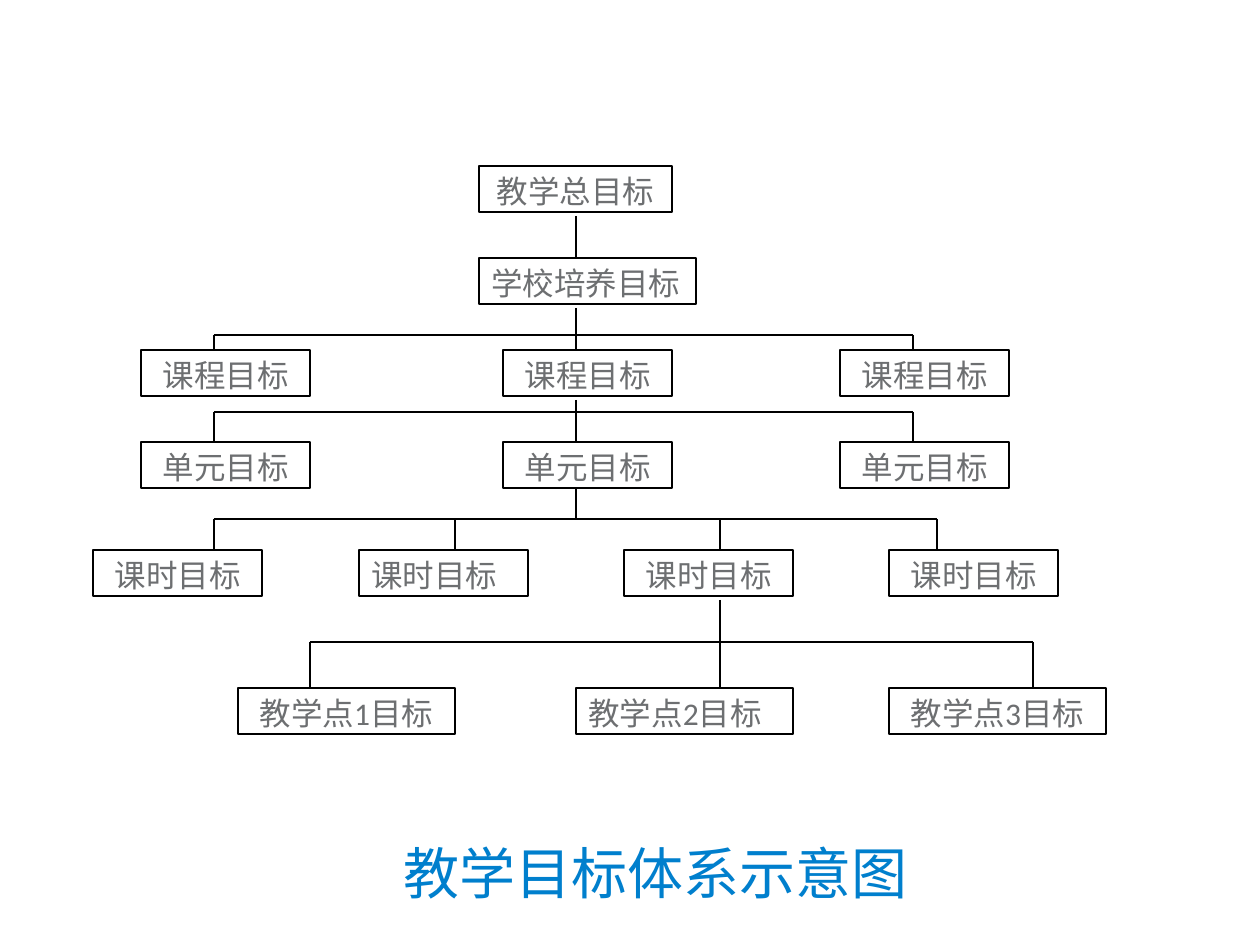
import dataclasses

import pptx
import pptx.dml.color
import pptx.enum.shapes
import pptx.enum.text
import pptx.oxml.ns
import pptx.util
from lxml import etree

EMU_PER_PX = 914400 / 126
ALIGN = pptx.enum.text.PP_ALIGN


@dataclasses.dataclass(frozen=True)
class Theme:
    title_color: str = "007FCD"
    text_color: str = "6D6F71"
    line_color: str = "000000"
    box_fill: str = "FFFFFF"
    title_font: str = "Arial"
    box_font: str = "Calibri"
    title_size: int = 32
    box_size: int = 18
    line_width: float = 0.75


def px(length):
    return pptx.util.Emu(round(length * EMU_PER_PX))


def rgb(color):
    return pptx.dml.color.RGBColor.from_string(color)


class GoalTree:
    def __init__(self, page, theme):
        self.page = page
        self.theme = theme

    def add_span(self, para, text, font, size, color):
        span = para.add_run()
        span.text = text
        span.font.name = font
        span.font.size = pptx.util.Pt(size)
        span.font.color.rgb = rgb(color)

    def outline(self, line):
        line.color.rgb = rgb(self.theme.line_color)
        line.width = pptx.util.Pt(self.theme.line_width)

    def title(self, text, left, top, width, height):
        box = self.page.shapes.title
        box.left, box.top, box.width, box.height = map(px, (left, top, width, height))
        box.text_frame.vertical_anchor = pptx.enum.text.MSO_ANCHOR.BOTTOM
        para = box.text_frame.paragraphs[0]
        para.alignment = ALIGN.CENTER
        para.line_spacing = 0.9
        self.add_span(para, text, self.theme.title_font, self.theme.title_size,
                      self.theme.title_color)

    def goal(self, text, left, top, width, align=ALIGN.CENTER):
        box = self.page.shapes.add_shape(
            pptx.enum.shapes.MSO_SHAPE.RECTANGLE,
            px(left), px(top), px(width), px(46))
        box.shadow.inherit = False
        box.fill.solid()
        box.fill.fore_color.rgb = rgb(self.theme.box_fill)
        self.outline(box.line)
        box.text_frame.word_wrap = True
        box.text_frame.vertical_anchor = pptx.enum.text.MSO_ANCHOR.TOP
        para = box.text_frame.paragraphs[0]
        para.alignment = align
        self.add_span(para, text, self.theme.box_font, self.theme.box_size,
                      self.theme.text_color)

    def line(self, x1, y1, x2, y2):
        connector = self.page.shapes.add_connector(
            pptx.enum.shapes.MSO_CONNECTOR.STRAIGHT, px(x1), px(y1), px(x2), px(y2))
        self.outline(connector.line)
        properties = connector._element.spPr
        etree.SubElement(properties, pptx.oxml.ns.qn("a:effectLst"))

    def branch(self, trunk, drops, bar, bottom):
        """Draw a trunk (x, top, bottom), a bar, and drops from the bar to a row."""
        x, top, end = trunk
        self.line(x, top, x, end)
        self.line(drops[0], bar, drops[-1], bar)
        for drop in drops:
            self.line(drop, bar, drop, bottom)


def main():
    deck = pptx.Presentation()
    deck.slide_width, deck.slide_height = px(1260), px(945)
    page = deck.slides.add_slide(deck.slide_layouts[5])
    tree = GoalTree(page, Theme())
    tree.title("教学目标体系示意图", 84, 816, 1143, 97)

    narrow, wide = 169, 217
    thirds = (141, 503, 840)
    quarters = (93, 359, 624, 889)
    total, school, course, unit, lesson, point = 166, 258, 350, 442, 550, 688

    tree.goal("教学总目标", 479, total, 193)
    tree.goal("学校培养目标", 479, school, wide, ALIGN.LEFT)
    for text, top in (("课程目标", course), ("单元目标", unit)):
        for left in thirds:
            tree.goal(text, left, top, narrow)
    for left in quarters:
        align = ALIGN.LEFT if left == quarters[1] else ALIGN.CENTER
        tree.goal("课时目标", left, lesson, narrow, align)
    for number, left in enumerate((238, 576, 889), start=1):
        align = ALIGN.LEFT if number == 2 else ALIGN.CENTER
        tree.goal(f"教学点{number}目标", left, point, wide, align)

    center, right_center = 576, 720
    tree.line(center, 216, center, school)
    tree.branch((center, 308, course), (214, 913), 335, course)
    tree.branch((center, 400, unit), (214, 913), 412, unit)
    tree.branch((center, 489, 519), (214, 455, right_center, 937), 519, lesson)
    tree.branch((right_center, 600, point), (310, 1033), 642, point)

    deck.save("out.pptx")


if __name__ == "__main__":
    main()
